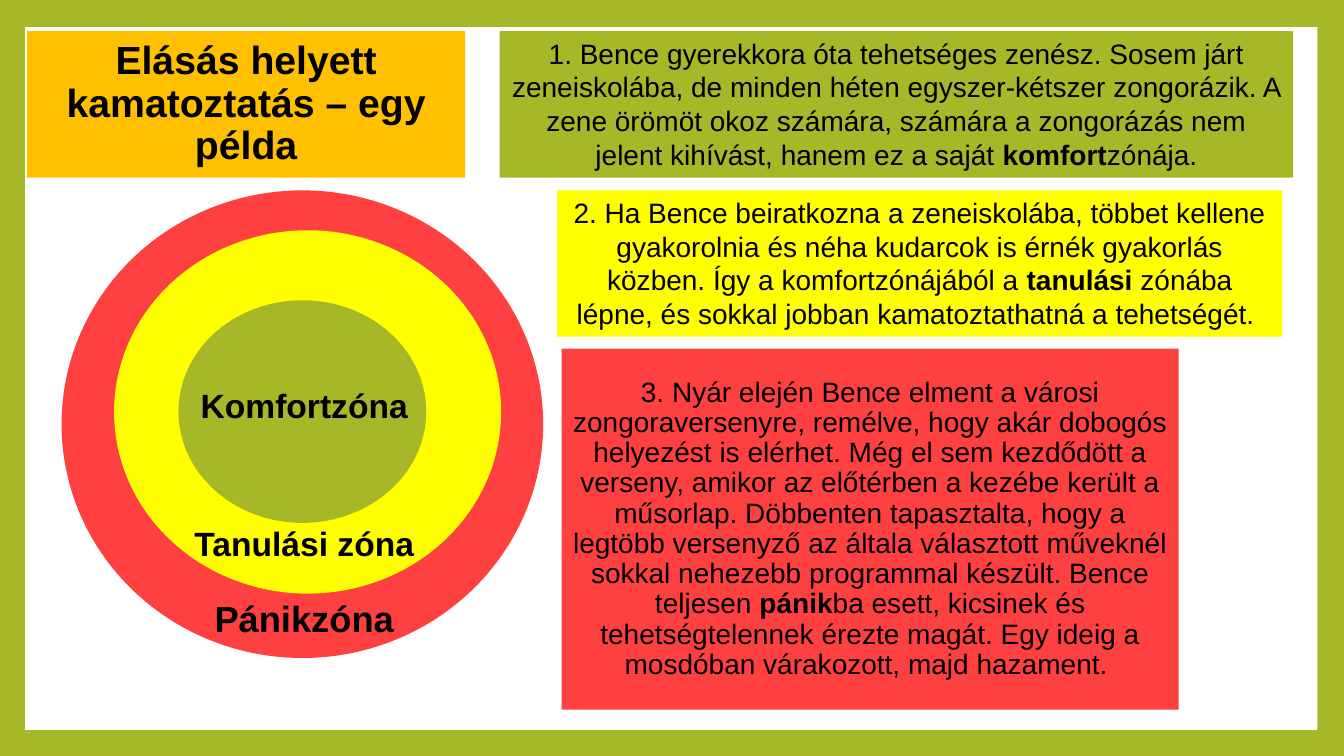
import pptx
import pptx.util
import pptx.dml.color
import pptx.enum.shapes
import pptx.enum.text

Pt = pptx.util.Pt
RGBColor = pptx.dml.color.RGBColor
MSO_SHAPE = pptx.enum.shapes.MSO_SHAPE
MSO_ANCHOR = pptx.enum.text.MSO_ANCHOR
PP_ALIGN = pptx.enum.text.PP_ALIGN

GREEN = RGBColor(0xA6, 0xB7, 0x27)
YELLOW = RGBColor(0xFF, 0xFF, 0x00)
RED = RGBColor(0xFF, 0x40, 0x40)
AMBER = RGBColor(0xFF, 0xC0, 0x00)
WHITE = RGBColor(0xFF, 0xFF, 0xFF)
BLACK = RGBColor(0x00, 0x00, 0x00)

TITLE = "**Elásás helyett kamatoztatás – egy példa**"
COMFORT = (
    "1. Bence gyerekkora óta tehetséges zenész. Sosem járt zeneiskolába, "
    "de minden héten egyszer-kétszer zongorázik. A zene örömöt okoz számára, "
    "számára a zongorázás nem jelent kihívást, hanem ez a saját "
    "**komfort**zónája."
)
LEARNING = (
    "2. Ha Bence beiratkozna a zeneiskolába, többet kellene gyakorolnia "
    "és néha kudarcok is érnék gyakorlás közben. Így a komfortzónájából a "
    "**tanulási** zónába lépne, és sokkal jobban kamatoztathatná a tehetségét. "
)
PANIC = (
    "3. Nyár elején Bence elment a városi zongoraversenyre, remélve, hogy "
    "akár dobogós helyezést is elérhet. Még el sem kezdődött a verseny, "
    "amikor az előtérben a kezébe került a műsorlap. Döbbenten tapasztalta, "
    "hogy a legtöbb versenyző az általa választott műveknél sokkal nehezebb "
    "programmal készült. Bence teljesen **pánik**ba esett, kicsinek és "
    "tehetségtelennek érezte magát. Egy ideig a mosdóban várakozott, majd "
    "hazament. "
)


def add_filled(s, kind, box, color):
    sp = s.shapes.add_shape(kind, *map(Pt, box))
    sp.shadow.inherit = False
    sp.fill.solid()
    sp.fill.fore_color.rgb = color
    sp.line.fill.background()
    return sp


def write(sp, text, size, spacing, anchor):
    tf = sp.text_frame
    tf.word_wrap = True
    tf.vertical_anchor = anchor
    p = tf.paragraphs[0]
    p.alignment = PP_ALIGN.CENTER
    p.line_spacing = spacing
    for i, part in enumerate(text.split("**")):
        if part:
            r = p.add_run()
            r.text = part
            r.font.name = "Arial"
            r.font.size = Pt(size)
            r.font.bold = i % 2 == 1
            r.font.color.rgb = BLACK


def add_panel(s, box, color, text, size=20, spacing=1.0, anchor=MSO_ANCHOR.TOP):
    sp = add_filled(s, MSO_SHAPE.RECTANGLE, box, color)
    write(sp, text, size, spacing, anchor)


def add_zones(s, box):
    left, top, width, height = box
    rings = [
        (0, 0, width, height, RED),
        (37.5, 28.5, 276.5, 259.5, YELLOW),
        (83.5, 78.5, 177, 159, GREEN),
    ]
    for x, y, w, h, color in rings:
        add_filled(s, MSO_SHAPE.OVAL, (left + x, top + y, w, h), color)
    labels = [
        (292.5, "**Pánikzóna**", 25.9, 0.8),
        (237.5, "**Tanulási zóna**", 24, 0.9),
        (139, "**Komfortzóna**", 24, 0.9),
    ]
    for y, text, size, spacing in labels:
        sp = s.shapes.add_textbox(Pt(left + 43), Pt(top + y), Pt(257), Pt(34))
        sp.text_frame.margin_left = Pt(10.8)
        write(sp, text, size, spacing, MSO_ANCHOR.TOP)


def add_example_slide(prs):
    s = prs.slides.add_slide(prs.slide_layouts[6])
    s.background.fill.solid()
    s.background.fill.fore_color.rgb = GREEN
    add_filled(s, MSO_SHAPE.RECTANGLE, (18, 19.3, 923, 502), WHITE)
    add_panel(s, (401.2, 249, 440.7, 258), RED, PANIC,
              spacing=0.9, anchor=MSO_ANCHOR.MIDDLE)
    add_zones(s, (44, 136, 344, 334))
    add_panel(s, (357, 22.3, 566.7, 104.5), GREEN, COMFORT)
    add_panel(s, (398, 136, 518, 104.5), YELLOW, LEARNING)
    add_panel(s, (19.3, 22.3, 313, 104.5), AMBER, TITLE,
              size=28, spacing=0.9, anchor=MSO_ANCHOR.MIDDLE)


def main():
    prs = pptx.Presentation()
    prs.slide_width = Pt(960)
    prs.slide_height = Pt(540)
    add_example_slide(prs)
    prs.save("out.pptx")


if __name__ == "__main__":
    main()
